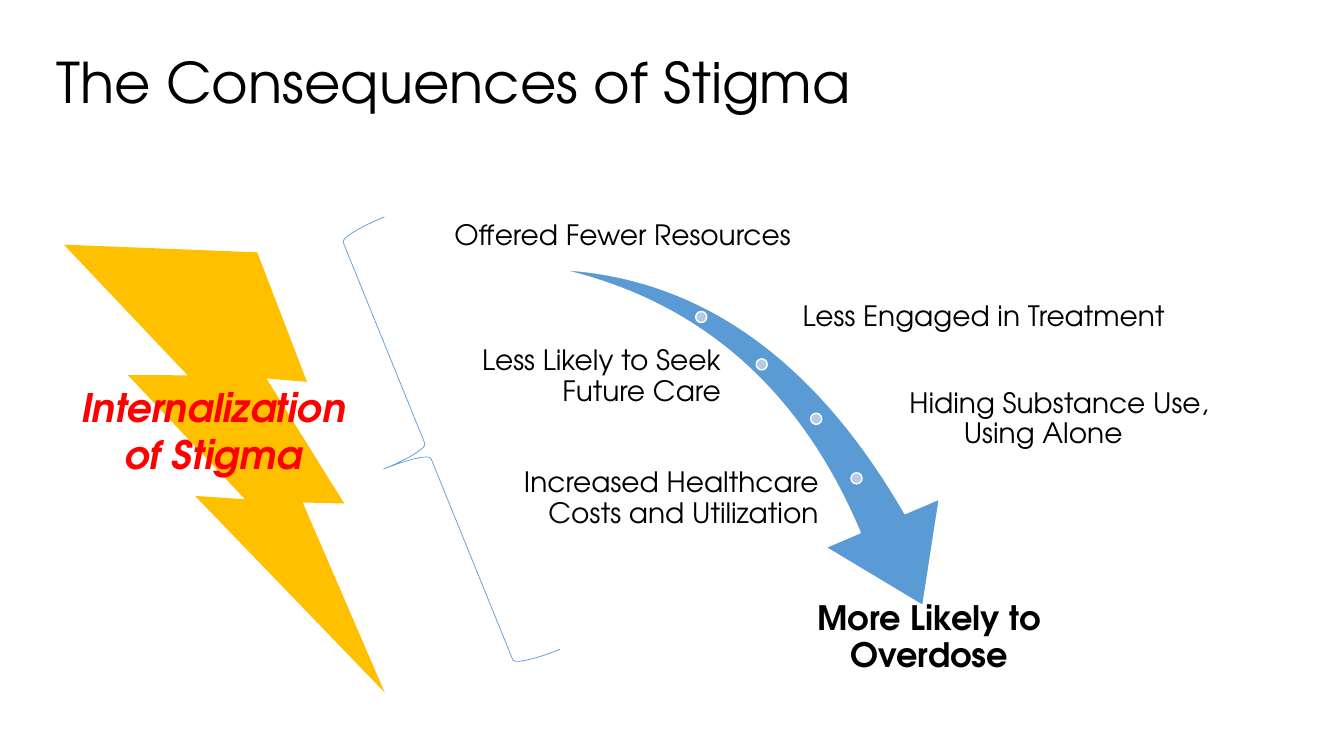
from dataclasses import dataclass

from pptx import Presentation
from pptx.dml.color import RGBColor
from pptx.enum.shapes import MSO_SHAPE
from pptx.enum.text import MSO_ANCHOR, MSO_AUTO_SIZE, PP_ALIGN
from pptx.util import Emu, Pt

EMU_PER_PX = 9144


def px(length):
    return Emu(length * EMU_PER_PX)


@dataclass(frozen=True)
class Theme:
    font: str = "TeX Gyre Adventor"
    text: str = "000000"
    alert: str = "FF0000"
    bolt: str = "FFC000"
    arrow: str = "5B9BD5"
    dot: str = "B5CBE7"
    outline: str = "FFFFFF"
    title_size: int = 40
    alert_size: int = 28
    outcome_size: int = 24
    label_size: int = 20


def apply_format(target, values):
    for name, value in values.items():
        setattr(target, name, value)


class SlideBuilder:
    def __init__(self, slide, theme):
        self.slide = slide
        self.theme = theme

    def set_text(self, text_frame, text, size, color=None, align=PP_ALIGN.LEFT,
                 spacing=0.9, bold=False, italic=False, hanging=0):
        """Fill the frame with one paragraph; hanging indents every line but the first."""
        text_frame.text = text.replace("\n", "\v")
        paragraph = text_frame.paragraphs[0]
        apply_format(paragraph, {"alignment": align, "line_spacing": spacing})
        if hanging:
            properties = paragraph._p.get_or_add_pPr()
            properties.set("marL", str(px(hanging)))
            properties.set("indent", str(px(-hanging)))
        for run in paragraph.runs:
            apply_format(run.font, {"name": self.theme.font, "size": Pt(size),
                                    "bold": bold, "italic": italic})
            run.font.color.rgb = RGBColor.from_string(color or self.theme.text)

    def title(self, text, left, top, width, height):
        shape = self.slide.shapes.title
        apply_format(shape, {"left": px(left), "top": px(top),
                             "width": px(width), "height": px(height)})
        apply_format(shape.text_frame, {"vertical_anchor": MSO_ANCHOR.MIDDLE,
                                        "auto_size": MSO_AUTO_SIZE.NONE})
        self.set_text(shape.text_frame, text, self.theme.title_size)

    def text_box(self, text, left, top, width, height, size,
                 anchor=MSO_ANCHOR.MIDDLE, margin=3, grow=False, **style):
        box = self.slide.shapes.add_textbox(px(left), px(top), px(width), px(height))
        frame = box.text_frame
        apply_format(frame, {
            "word_wrap": True,
            "vertical_anchor": anchor,
            "auto_size": MSO_AUTO_SIZE.SHAPE_TO_FIT_TEXT if grow else MSO_AUTO_SIZE.NONE,
        })
        if margin is not None:
            sides = ("left", "top", "right", "bottom")
            apply_format(frame, {f"margin_{side}": px(margin) for side in sides})
        self.set_text(frame, text, size, **style)

    def shape(self, kind, left, top, width, height, fill=None, line=None,
              line_width=1, rotation=0, adjustments=()):
        shape = self.slide.shapes.add_shape(kind, px(left), px(top), px(width), px(height))
        shape.shadow.inherit = False
        shape.rotation = rotation
        for index, value in enumerate(adjustments):
            shape.adjustments[index] = value
        if fill:
            shape.fill.solid()
            shape.fill.fore_color.rgb = RGBColor.from_string(fill)
        else:
            shape.fill.background()
        if line:
            shape.line.color.rgb = RGBColor.from_string(line)
            shape.line.width = Pt(line_width)
        else:
            shape.line.fill.background()


def main():
    presentation = Presentation()
    apply_format(presentation, {"slide_width": px(1333), "slide_height": px(750)})
    title_only = presentation.slide_layouts[5]
    theme = Theme()
    builder = SlideBuilder(presentation.slides.add_slide(title_only), theme)

    builder.title("The Consequences of Stigma", 46, 34, 1189, 101)

    builder.shape(MSO_SHAPE.SWOOSH_ARROW, 546, 280, 423, 295, fill=theme.arrow,
                  line=theme.outline, rotation=73.3, adjustments=(0.163, 0.314))
    for left, top in ((690, 309), (750, 356), (804, 410), (844, 469)):
        builder.shape(MSO_SHAPE.OVAL, left, top, 11, 11, fill=theme.dot, line=theme.outline)

    consequences = (
        ("Offered Fewer Resources", (419, 190, 397, 63),
         {"align": PP_ALIGN.CENTER, "anchor": MSO_ANCHOR.BOTTOM}),
        ("Less Engaged in Treatment", (793, 285, 367, 59), {}),
        ("Less Likely to Seek Future Care", (436, 335, 282, 78), {"align": PP_ALIGN.RIGHT}),
        ("Hiding Substance Use,\nUsing Alone", (899, 377, 434, 78), {"hanging": 54}),
        ("Increased Healthcare Costs and Utilization", (456, 456, 359, 78),
         {"align": PP_ALIGN.RIGHT}),
    )
    for text, bounds, style in consequences:
        builder.text_box(text, *bounds, theme.label_size, **style)
    builder.text_box("More Likely to Overdose", 787, 594, 269, 78, theme.outcome_size,
                     anchor=MSO_ANCHOR.TOP, align=PP_ALIGN.CENTER, bold=True)

    builder.shape(MSO_SHAPE.LIGHTNING_BOLT, 4, 256, 461, 358, fill=theme.bolt, rotation=21.9)
    builder.text_box("Internalization of Stigma", 64, 375, 295, 104, theme.alert_size,
                     anchor=MSO_ANCHOR.TOP, margin=None, grow=True, color=theme.alert,
                     align=PP_ALIGN.CENTER, spacing=1.0, bold=True, italic=True)
    builder.shape(MSO_SHAPE.LEFT_BRACE, 377, 216, 95, 463, line=theme.arrow,
                  line_width=0.5, rotation=337.9)

    presentation.save("out.pptx")


if __name__ == "__main__":
    main()
